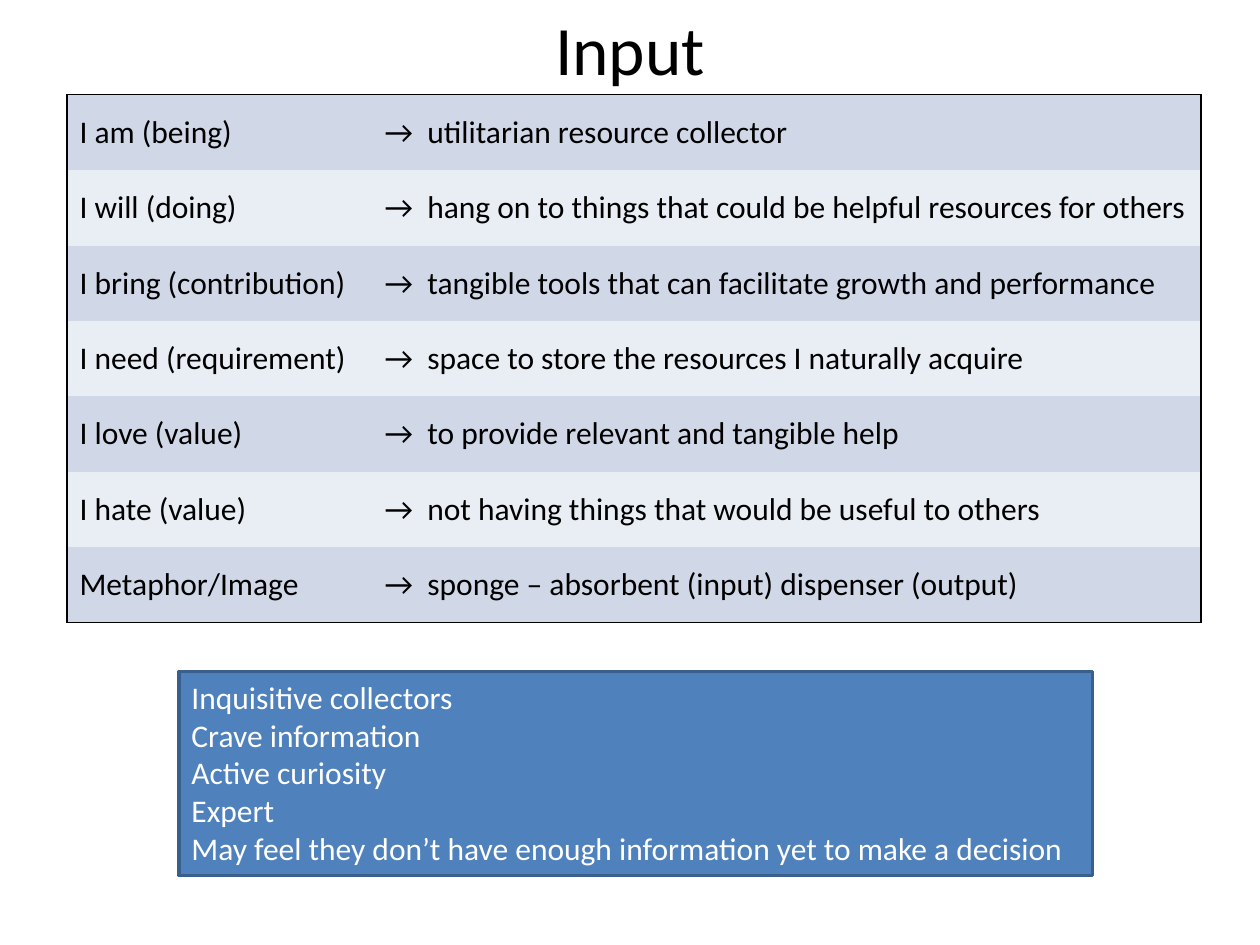
import lxml.etree
import pptx
import pptx.dml.color
import pptx.enum.shapes
import pptx.enum.text
import pptx.oxml.ns
import pptx.util

Cm = pptx.util.Cm
Pt = pptx.util.Pt
RGBColor = pptx.dml.color.RGBColor
Align = pptx.enum.text.PP_ALIGN
Anchor = pptx.enum.text.MSO_ANCHOR

BLACK = RGBColor(0x00, 0x00, 0x00)
WHITE = RGBColor(0xFF, 0xFF, 0xFF)
BANDS = (RGBColor(0xD0, 0xD8, 0xE8), RGBColor(0xE9, 0xED, 0xF4))
BLUE = RGBColor(0x4F, 0x81, 0xBD)
DARK_BLUE = RGBColor(0x3A, 0x5F, 0x8C)

STATEMENTS = (
    ("I am (being)", "utilitarian resource collector"),
    ("I will (doing)", "hang on to things that could be helpful resources for others"),
    ("I bring (contribution)", "tangible tools that can facilitate growth and performance"),
    ("I need (requirement)", "space to store the resources I naturally acquire"),
    ("I love (value)", "to provide relevant and tangible help"),
    ("I hate (value)", "not having things that would be useful to others"),
    ("Metaphor/Image", "sponge – absorbent (input) dispenser (output)"),
)
TRAITS = (
    "Inquisitive collectors",
    "Crave information",
    "Active curiosity",
    "Expert",
    "May feel they don’t have enough information yet to make a decision",
)
COLUMN_WIDTHS = (Cm(6.15), Cm(16.71))
ROW_HEIGHT = Cm(1.52)


def write_text(frame, *lines, size=18, color=BLACK, align=Align.LEFT, anchor=Anchor.MIDDLE):
    """Write each line as one formatted paragraph of a text frame."""
    frame.word_wrap = True
    frame.vertical_anchor = anchor
    for index, line in enumerate(lines):
        para = frame.paragraphs[0] if index == 0 else frame.add_paragraph()
        para.alignment = align
        span = para.add_run()
        span.text = line
        span.font.name = "Calibri"
        span.font.size = Pt(size)
        span.font.color.rgb = color


def set_borders(cell, outer_sides):
    """Draw the outer sides of a cell in black and hide the others."""
    properties = cell._tc.get_or_add_tcPr()
    for side in "LRTB":
        line = lxml.etree.SubElement(
            properties, pptx.oxml.ns.qn(f"a:ln{side}"), w=str(Pt(1)))
        if side in outer_sides:
            fill = lxml.etree.SubElement(line, pptx.oxml.ns.qn("a:solidFill"))
            lxml.etree.SubElement(fill, pptx.oxml.ns.qn("a:srgbClr"), val=str(BLACK))
        else:
            lxml.etree.SubElement(line, pptx.oxml.ns.qn("a:noFill"))


def add_title(page, text):
    """Place and fill the title placeholder."""
    title = page.shapes.title
    title.left, title.top, title.width, title.height = Cm(1.27), Cm(0.43), Cm(22.86), Cm(1.07)
    write_text(title.text_frame, text, size=39.6, align=Align.CENTER)
    title.text_frame.auto_size = pptx.enum.text.MSO_AUTO_SIZE.NONE


def add_statement_table(page):
    """Add the banded table of statements with a black frame."""
    last = len(STATEMENTS) - 1
    table = page.shapes.add_table(
        len(STATEMENTS), len(COLUMN_WIDTHS), Cm(1.35), Cm(1.91),
        sum(COLUMN_WIDTHS), ROW_HEIGHT * len(STATEMENTS)).table
    table.first_row = False
    for column, width in zip(table.columns, COLUMN_WIDTHS):
        column.width = width
    for row, (prompt, answer) in enumerate(STATEMENTS):
        table.rows[row].height = ROW_HEIGHT
        edge = "T" if row == 0 else "B" if row == last else ""
        for column, (text, side) in enumerate(((prompt, "L"), (f"→  {answer}", "R"))):
            cell = table.cell(row, column)
            set_borders(cell, side + edge)
            cell.fill.solid()
            cell.fill.fore_color.rgb = BANDS[row % 2]
            cell.vertical_anchor = Anchor.MIDDLE
            write_text(cell.text_frame, text)


def add_trait_box(page):
    """Add the blue box that lists the traits."""
    box = page.shapes.add_shape(
        pptx.enum.shapes.MSO_SHAPE.RECTANGLE, Cm(3.61), Cm(13.54), Cm(18.42), Cm(4.11))
    box.shadow.inherit = False
    box.fill.solid()
    box.fill.fore_color.rgb = BLUE
    box.line.color.rgb = DARK_BLUE
    box.line.width = Pt(2)
    write_text(box.text_frame, *TRAITS, color=WHITE, anchor=Anchor.TOP)
    box.text_frame.auto_size = pptx.enum.text.MSO_AUTO_SIZE.SHAPE_TO_FIT_TEXT


def main():
    """Build the slide and save it."""
    deck = pptx.Presentation()
    deck.slide_width, deck.slide_height = Cm(25.4), Cm(19.05)
    page = deck.slides.add_slide(deck.slide_layouts.get_by_name("Title Only"))
    add_title(page, "Input")
    add_statement_table(page)
    add_trait_box(page)
    deck.save("out.pptx")


if __name__ == "__main__":
    main()
